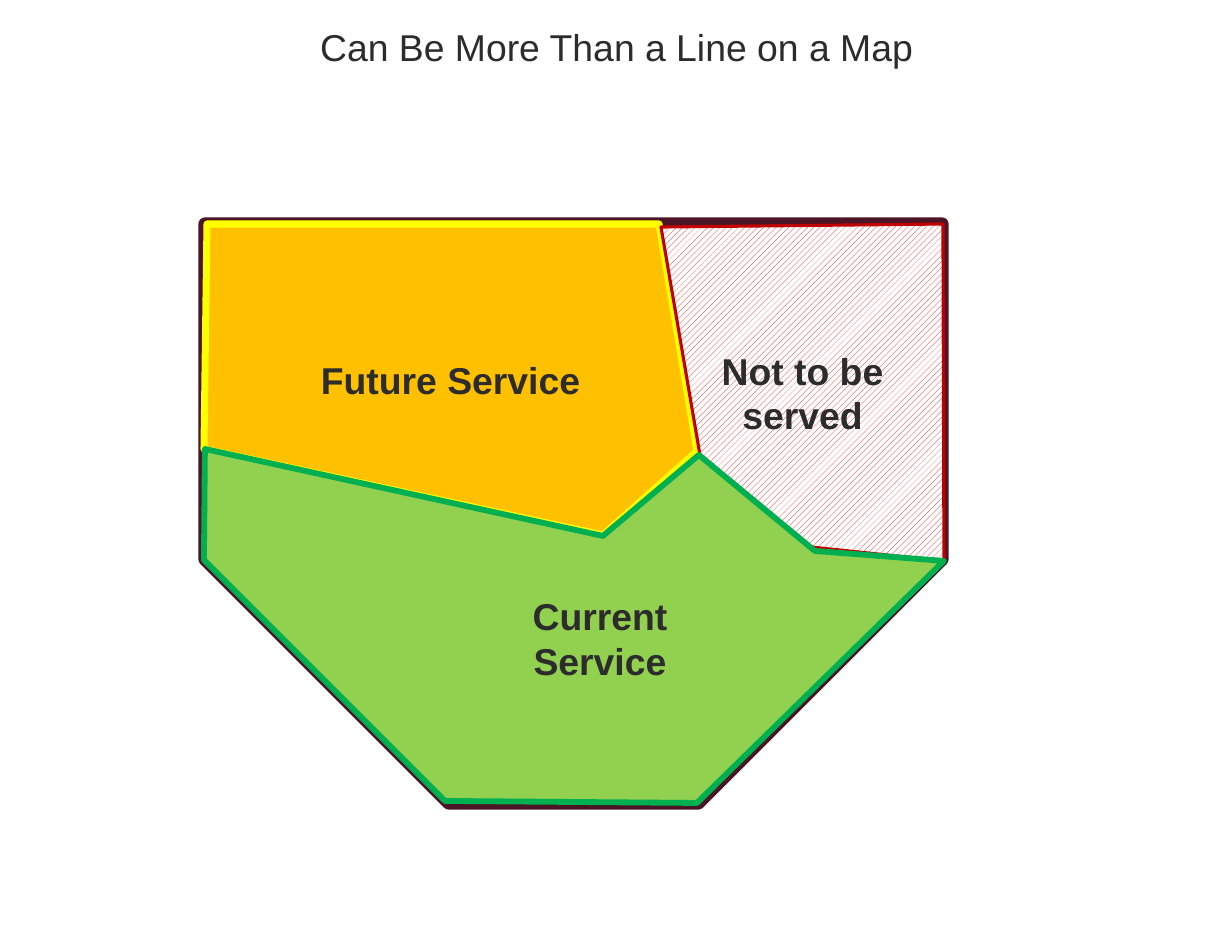
"""Build a slide that maps a service territory as three labelled zones."""
from pptx import Presentation
from pptx.dml.color import RGBColor
from pptx.enum.dml import MSO_PATTERN
from pptx.enum.shapes import MSO_SHAPE
from pptx.enum.text import MSO_ANCHOR, PP_ALIGN
from pptx.util import Pt

PX = 914400 / 112
THEME = {
    "font": "Arial", "size": 24, "text": "2C2C2D", "paper": "FFFFFF",
    "border": "4B1525", "border_width": 8.5,
    "future": "FFC000", "future_line": "FFFF00",
    "unserved": "FF0000", "unserved_line": "C00000",
    "current": "92D050", "current_line": "00B050",
}
TITLE = ("Can Be More Than a Line on a Map", (305, 19, 623, 56))
BORDER = (205, 224, 737, 579)
BORDER_SNIP = 0.421
ZONES = [
    {"name": "future", "width": 4.5, "label": "Future Service",
     "points": [(697, 451), (659, 224), (207, 224), (204, 449), (603, 535)]},
    {"name": "unserved", "width": 2, "label": "Not to be\vserved", "hatched": True,
     "points": [(661, 227), (943, 224), (944, 561), (811, 547), (700, 455)]},
    {"name": "current", "width": 3.75, "label": "Current Service",
     "label_box": (450, 610, 300, 56),
     "points": [(697, 803), (445, 801), (204, 560), (205, 449),
                (603, 536), (699, 455), (815, 551), (944, 561)]},
]


def color(name):
    return RGBColor.from_string(THEME[name])


def emu(box):
    return [round(v * PX) for v in box]


def set_text(shape, text, bold, wrap):
    tf = shape.text_frame
    tf.text = text
    tf.word_wrap = wrap
    tf.vertical_anchor = MSO_ANCHOR.MIDDLE
    for p in tf.paragraphs:
        p.alignment = PP_ALIGN.CENTER
        for r in p.runs:
            r.font.name = THEME["font"]
            r.font.size = Pt(THEME["size"])
            r.font.bold = bold
            r.font.color.rgb = color("text")


def set_line(shape, name, width):
    shape.shadow.inherit = False
    shape.line.color.rgb = color(name)
    shape.line.width = Pt(width)


def add_border(s):
    sp = s.shapes.add_shape(MSO_SHAPE.SNIP_2_SAME_RECTANGLE, *emu(BORDER))
    sp.adjustments[0] = BORDER_SNIP
    sp.adjustments[1] = 0
    sp.rotation = 180
    sp.fill.background()
    set_line(sp, "border", THEME["border_width"])


def add_zone(s, zone):
    start, *rest = zone["points"]
    builder = s.shapes.build_freeform(*start, scale=PX)
    builder.add_line_segments(rest, close=True)
    sp = builder.convert_to_shape()
    if zone.get("hatched"):
        sp.fill.patterned()
        sp.fill.pattern = MSO_PATTERN.WIDE_UPWARD_DIAGONAL
        sp.fill.fore_color.rgb = color(zone["name"])
        sp.fill.back_color.rgb = color("paper")
    else:
        sp.fill.solid()
        sp.fill.fore_color.rgb = color(zone["name"])
    set_line(sp, zone["name"] + "_line", zone["width"])
    box = zone.get("label_box")
    target = s.shapes.add_textbox(*emu(box)) if box else sp
    set_text(target, zone["label"], bold=True, wrap=not box)


def main():
    prs = Presentation()
    prs.slide_width, prs.slide_height = emu((1232, 952))
    s = prs.slides.add_slide(prs.slide_layouts[5])
    text, box = TITLE
    title = s.shapes.title
    title.left, title.top, title.width, title.height = emu(box)
    set_text(title, text, bold=False, wrap=False)
    add_border(s)
    for zone in ZONES:
        add_zone(s, zone)
    prs.save("out.pptx")


if __name__ == "__main__":
    main()
